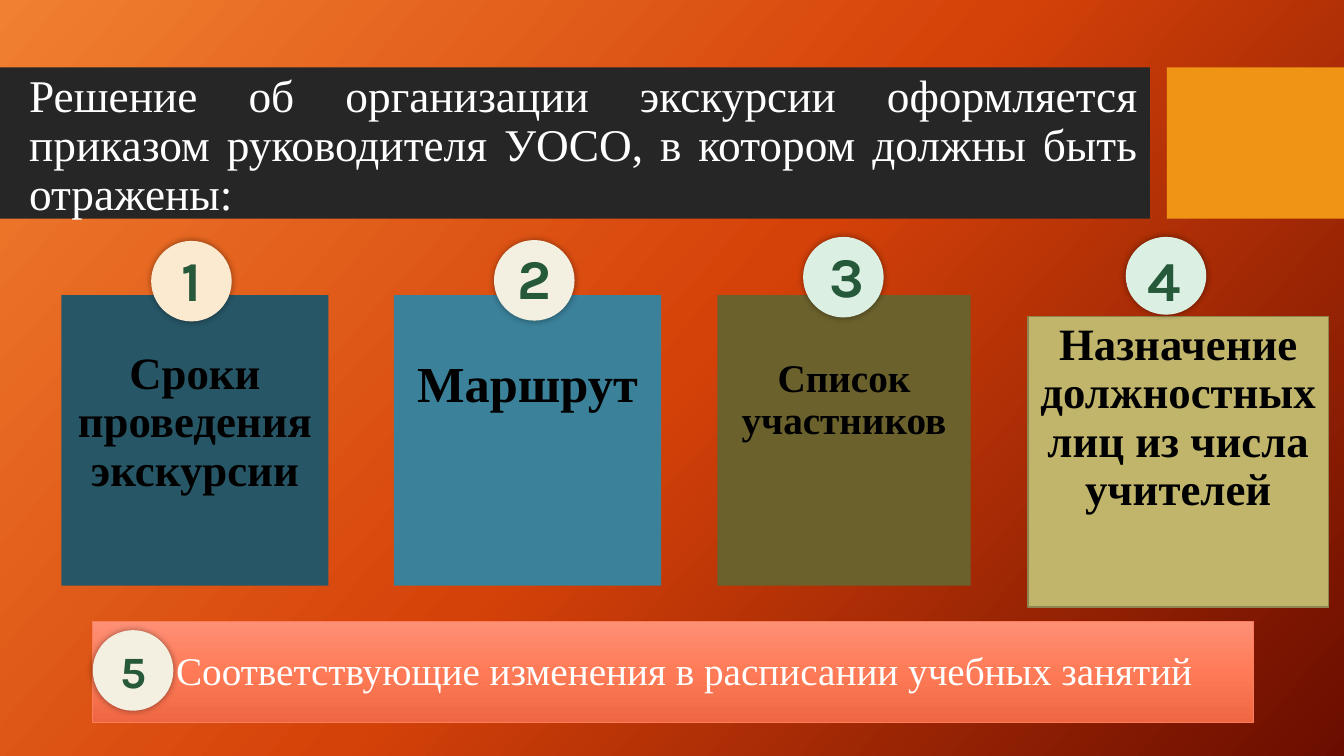
"""Build the slide on what an excursion order must contain."""
from lxml import etree
from pptx import Presentation
from pptx.dml.color import RGBColor
from pptx.enum.shapes import MSO_SHAPE
from pptx.enum.text import MSO_ANCHOR, PP_ALIGN
from pptx.oxml.ns import qn
from pptx.util import Cm, Pt

RECT, OVAL = MSO_SHAPE.RECTANGLE, MSO_SHAPE.OVAL
TOP, MIDDLE = MSO_ANCHOR.TOP, MSO_ANCHOR.MIDDLE
LEFT, CENTER, JUSTIFY = PP_ALIGN.LEFT, PP_ALIGN.CENTER, PP_ALIGN.JUSTIFY
SERIF, SANS = "Times New Roman", "Karla"
WHITE, BLACK, GREEN = "FFFFFF", "000000", "26583A"

TITLE = ("Решение об организации экскурсии оформляется приказом руководителя "
         "УOCO, в котором должны быть отражены:")
CHANGES = "Соответствующие изменения в расписании учебных занятий"
BACKGROUND = [(0, "F18031"), (50, "D54209"), (100, "6A0D00")]
BAR_FILL = [(0, "FD8F75"), (50, "FF7B57"), (100, "EE6742")]
BANDS = [((0, 1.7, 28.98, 3.81), "262626"), ((29.41, 1.7, 4.46, 3.81), "F09415")]
BADGE, DIGIT_H, CARD_H = 2.03, 1.96, 7.32
CARDS = [
    dict(text="Сроки проведения экскурсии", size=32, inset=1.4, fill="275666",
         at=(1.55, 7.44), width=6.73, badge=(3.81, 6.07, BADGE),
         badge_fill="FCEAD0", digit=(3.82, 6.05)),
    dict(text="Маршрут", size=36, inset=1.6, fill="3A8199",
         at=(9.93, 7.44), width=6.73, badge=(12.45, 6.05, BADGE),
         badge_fill="F3F0E1", digit=(12.45, 6.02)),
    dict(text="Список участников", size=28, inset=1.6, fill="6A612C",
         at=(18.08, 7.44), width=6.38, badge=(20.24, 5.97, BADGE),
         badge_fill="DBEFE3", digit=(20.32, 5.97)),
    dict(text="Назначение должностных лиц из числа учителей", size=32, inset=0.13,
         fill="C1B56B", line="8F864F", at=(25.91, 7.98), width=7.57,
         badge=(28.37, 5.97, 1.96), badge_fill="DBEFE3", digit=(28.32, 6.05)),
]


def rgb(value):
    """Turn a hex string into a colour."""
    return RGBColor.from_string(value)


def set_gradient(fill, element, stops, angle):
    """Fill an element with a linear gradient running clockwise by angle."""
    fill.gradient()
    fill.gradient_angle = 360 - angle
    stop_list = element.find(".//" + qn("a:gsLst"))
    for old in list(stop_list):
        stop_list.remove(old)
    for pos, colour in stops:
        gs = etree.SubElement(stop_list, qn("a:gs"), pos=str(pos * 1000))
        etree.SubElement(gs, qn("a:srgbClr"), val=colour)


def add_block(slide, kind, box, fill=None, line=None, width=1):
    """Add a flat preset shape."""
    sp = slide.shapes.add_shape(kind, *map(Cm, box))
    sp.shadow.inherit = False
    if fill:
        sp.fill.solid()
        sp.fill.fore_color.rgb = rgb(fill)
    if line:
        sp.line.color.rgb = rgb(line)
        sp.line.width = Pt(width)
    else:
        sp.line.fill.background()
    return sp


def add_badge(slide, left, top, height, fill):
    """Add a round badge with a soft shadow."""
    sp = add_block(slide, OVAL, (left, top, BADGE, height), fill)
    effects = sp.element.spPr.find(qn("a:effectLst"))
    shadow = etree.SubElement(effects, qn("a:outerShdw"), blurRad=str(Pt(5)),
                              dist="0", dir="0", algn="ctr", rotWithShape="0")
    colour = etree.SubElement(shadow, qn("a:srgbClr"), val=BLACK)
    etree.SubElement(colour, qn("a:alpha"), val="40000")
    return sp


def set_text(sp, text, size, font, colour, align=CENTER, anchor=TOP,
             bold=False, spacing=1.0):
    """Write one formatted paragraph into a shape."""
    tf = sp.text_frame
    tf.text = text
    tf.word_wrap = True
    tf.vertical_anchor = anchor
    p = tf.paragraphs[0]
    p.alignment = align
    p.line_spacing = spacing
    p.space_before = Pt(0)
    r = p.runs[0]
    r.font.size = Pt(size)
    r.font.name = font
    r.font.bold = bold
    r.font.color.rgb = rgb(colour)


def add_label(slide, box, *args, **kwargs):
    """Add a text box."""
    sp = slide.shapes.add_textbox(*map(Cm, box))
    set_text(sp, *args, **kwargs)


def main():
    """Build and save the slide."""
    prs = Presentation()
    prs.slide_width, prs.slide_height = Cm(33.87), Cm(19.05)
    slide = prs.slides.add_slide(prs.slide_layouts[5])
    set_gradient(slide.background.fill, slide.element, BACKGROUND, 42)

    for box, fill in BANDS:
        add_block(slide, RECT, box, fill)
    title = slide.shapes.title
    title.left, title.top, title.width, title.height = map(Cm, (0.48, 1.68, 28.45, 4.04))
    set_text(title, TITLE, 32.4, SERIF, WHITE, JUSTIFY, MIDDLE, spacing=0.9)
    slide.shapes.element.append(title.element)

    for number, card in enumerate(CARDS, 1):
        sp = add_block(slide, RECT, (*card["at"], card["width"], CARD_H),
                       card["fill"], card.get("line"))
        set_text(sp, card["text"], card["size"], SERIF, BLACK, bold=True, spacing=0.9)
        sp.text_frame.margin_top = Cm(card["inset"])
        add_badge(slide, *card["badge"], card["badge_fill"])
        add_label(slide, (*card["digit"], BADGE, DIGIT_H), str(number), 40, SANS,
                  GREEN, bold=True)

    bar = add_block(slide, RECT, (2.34, 15.67, 29.26, 2.54), line="FA7E5C", width=0.75)
    set_gradient(bar.fill, bar.element, BAR_FILL, 90)
    badge = add_badge(slide, 2.34, 15.88, BADGE, "F3F0E1")
    set_text(badge, str(len(CARDS) + 1), 32, SANS, GREEN, anchor=MIDDLE, bold=True)
    add_label(slide, (4.19, 16.15, 26.31, 1.45), CHANGES, 28, SERIF, WHITE, LEFT)

    prs.save("out.pptx")


if __name__ == "__main__":
    main()
